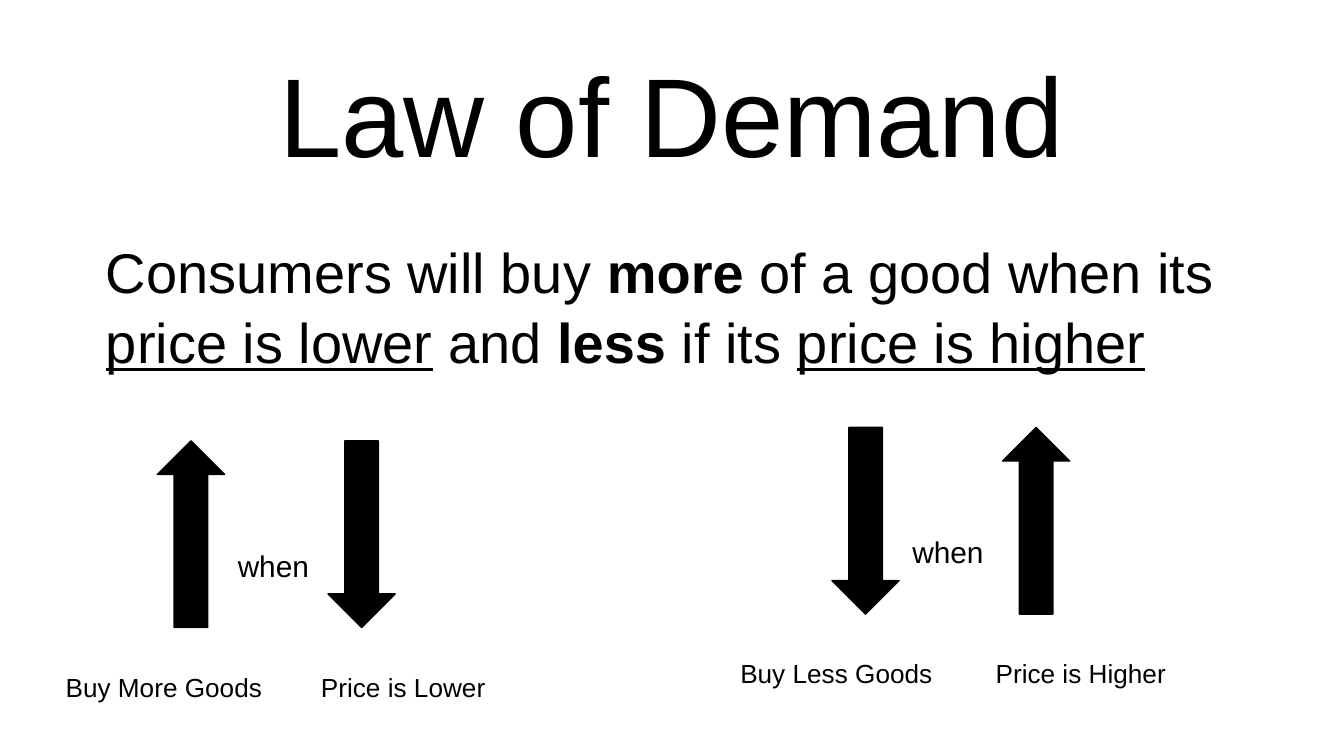
from dataclasses import dataclass

from pptx import Presentation
from pptx.dml.color import RGBColor
from pptx.enum.shapes import MSO_SHAPE as Shape
from pptx.enum.text import MSO_AUTO_SIZE as AutoSize
from pptx.util import Pt


@dataclass(frozen=True)
class Theme:
    ink: RGBColor = RGBColor(0, 0, 0)
    paper: RGBColor = RGBColor(255, 255, 255)
    font: str = "Arial"
    title: int = 60
    statement: int = 30
    link: int = 16
    caption: int = 14
    inset: float = 7.2
    line_spacing: float = 1.05


THEME = Theme()


def add_text(slide, left, top, width, height, pieces, size):
    """Write one paragraph of (wording, style) pieces; style is "", "bold" or "underline"."""
    box = slide.shapes.add_textbox(Pt(left), Pt(top), Pt(width), Pt(height))
    frame = box.text_frame
    frame.word_wrap = True
    frame.auto_size = AutoSize.SHAPE_TO_FIT_TEXT
    frame.margin_left = frame.margin_right = Pt(THEME.inset)
    frame.margin_top = frame.margin_bottom = Pt(THEME.inset)
    paragraph = frame.paragraphs[0]
    paragraph.line_spacing = THEME.line_spacing
    for wording, style in pieces:
        run = paragraph.add_run()
        run.text = wording
        run.font.name = THEME.font
        run.font.size = Pt(size)
        run.font.color.rgb = THEME.ink
        if style:
            setattr(run.font, style, True)


def add_arrow(slide, left, top, rising):
    arrow = slide.shapes.add_shape(Shape.UP_ARROW, Pt(left), Pt(top), Pt(36), Pt(100))
    arrow.rotation = 0 if rising else 180
    arrow.shadow.inherit = False
    arrow.fill.solid()
    arrow.fill.fore_color.rgb = THEME.ink
    arrow.line.color.rgb = THEME.ink
    arrow.line.width = Pt(0.75)


def add_relation(slide, left, top, goods, price, buying_more):
    """Pair the move in goods bought with the opposite move in price."""
    add_arrow(slide, left + 56.2, top, buying_more)
    add_text(slide, left, top + 115.2, 136.8, 31.7, [(goods, "")], THEME.caption)
    add_arrow(slide, left + 147.6, top, not buying_more)
    add_text(slide, left + 136.8, top + 115.2, 113, 31.7, [(price, "")], THEME.caption)
    add_text(slide, left + 92.2, top + 49, 54.8, 33.8, [("when", "")], THEME.link)


def main():
    deck = Presentation()
    deck.slide_width, deck.slide_height = Pt(720), Pt(405)
    slide = deck.slides.add_slide(deck.slide_layouts[6])
    slide.background.fill.solid()
    slide.background.fill.fore_color.rgb = THEME.paper

    add_text(slide, 142.6, 13.7, 454.3, 87.1, [("Law of Demand", "")], THEME.title)
    statement = [
        ("Consumers will buy ", ""),
        ("more", "bold"),
        (" of a good when its ", ""),
        ("price is lower", "underline"),
        (" and ", ""),
        ("less", "bold"),
        (" if its ", ""),
        ("price is higher", "underline"),
    ]
    add_text(slide, 49.7, 118.1, 626.4, 87.1, statement, THEME.statement)
    add_relation(slide, 28.1, 236.2, "Buy More Goods", "Price is Lower", True)
    add_relation(slide, 389.5, 229, "Buy Less Goods", "Price is Higher", False)
    deck.save("out.pptx")


if __name__ == "__main__":
    main()
